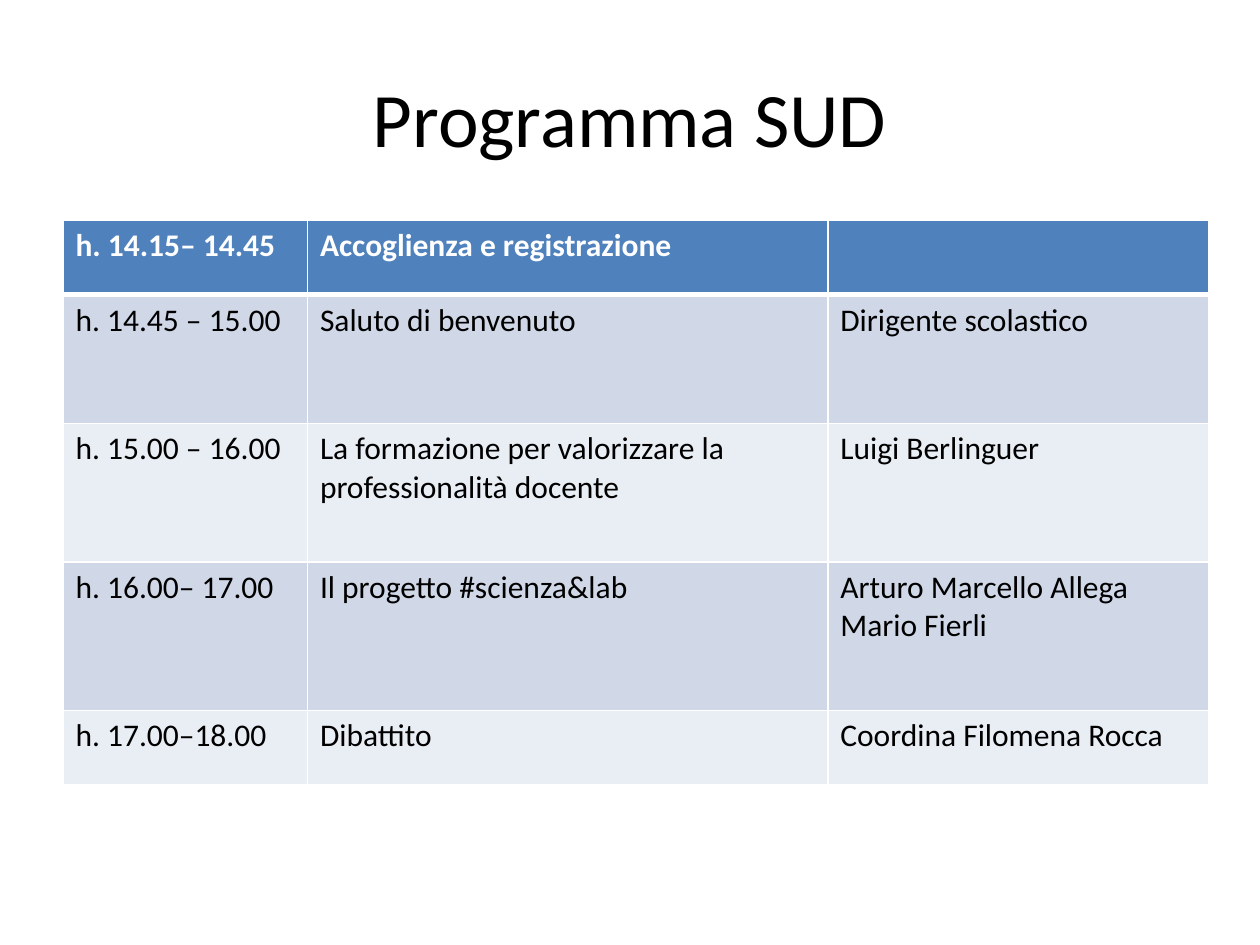
from dataclasses import dataclass

import lxml.etree
import pptx
import pptx.dml.color
import pptx.enum.text
import pptx.oxml.ns
import pptx.util
from pptx.util import Inches

RGBColor = pptx.dml.color.RGBColor
BLACK = RGBColor(0x00, 0x00, 0x00)
WHITE = RGBColor(0xFF, 0xFF, 0xFF)
HEADER_BLUE = RGBColor(0x4F, 0x81, 0xBD)
BAND_DARK = RGBColor(0xD0, 0xD8, 0xE8)
BAND_LIGHT = RGBColor(0xE9, 0xED, 0xF4)
FONT = "Calibri"
COLUMN_WIDTHS = (1.94, 4.13, 3.02)


@dataclass
class Session:
    height: float
    time: str
    topic: str
    speakers: str = ""


SESSIONS = [
    Session(0.59, "h. 14.15– 14.45", "Accoglienza e registrazione"),
    Session(1.02, "h. 14.45 – 15.00", "Saluto di benvenuto", "Dirigente scolastico"),
    Session(1.1, "h. 15.00 – 16.00",
            "La formazione per valorizzare la professionalità docente", "Luigi Berlinguer"),
    Session(1.18, "h. 16.00– 17.00", "Il progetto #scienza&lab",
            "Arturo Marcello Allega\nMario Fierli"),
    Session(0.59, "h. 17.00–18.00", "Dibattito", "Coordina Filomena Rocca"),
]


def write_text(frame, text: str, *, size: float, color: RGBColor,
               bold: bool = False, align=pptx.enum.text.PP_ALIGN.LEFT) -> None:
    """Write one paragraph for each line of text."""
    for index, line in enumerate(text.split("\n")):
        para = frame.add_paragraph() if index else frame.paragraphs[0]
        para.alignment = align
        para.font.size = pptx.util.Pt(size)
        if not line:
            continue
        span = para.add_run()
        span.text = line
        span.font.name = FONT
        span.font.size = pptx.util.Pt(size)
        span.font.bold = bold
        span.font.color.rgb = color


def set_border(cell, side: str, width: float) -> None:
    """Give one side (L, R, T or B) of a cell a white line."""
    qn = pptx.oxml.ns.qn
    properties = cell._tc.get_or_add_tcPr()
    line = lxml.etree.SubElement(properties, qn(f"a:ln{side}"), w=str(pptx.util.Pt(width)))
    fill = lxml.etree.SubElement(line, qn("a:solidFill"))
    lxml.etree.SubElement(fill, qn("a:srgbClr"), val=str(WHITE))


def add_title(page, text: str) -> None:
    box = page.shapes.add_textbox(Inches(0.5), Inches(0.3), Inches(9), Inches(1.25))
    box.text_frame.word_wrap = True
    box.text_frame.vertical_anchor = pptx.enum.text.MSO_ANCHOR.MIDDLE
    write_text(box.text_frame, text, size=44, color=BLACK,
               align=pptx.enum.text.PP_ALIGN.CENTER)


def add_programme(page, sessions: list[Session]) -> None:
    table = page.shapes.add_table(
        len(sessions), len(COLUMN_WIDTHS), Inches(0.5), Inches(1.75),
        Inches(sum(COLUMN_WIDTHS)), Inches(sum(item.height for item in sessions))).table
    for column, width in zip(table.columns, COLUMN_WIDTHS):
        column.width = Inches(width)

    for row, session in enumerate(sessions):
        table.rows[row].height = Inches(session.height)
        header = row == 0
        band = HEADER_BLUE if header else (BAND_LIGHT, BAND_DARK)[row % 2]
        # A thick line parts the header from the rows below
        borders = {"L": 1, "R": 1, "T": 3 if row == 1 else 1, "B": 3 if header else 1}
        for column, text in enumerate((session.time, session.topic, session.speakers)):
            cell = table.cell(row, column)
            for side, width in borders.items():
                set_border(cell, side, width)
            cell.fill.solid()
            cell.fill.fore_color.rgb = band
            write_text(cell.text_frame, text, size=18, bold=header,
                       color=WHITE if header else BLACK)


def main() -> None:
    deck = pptx.Presentation()
    deck.slide_width, deck.slide_height = Inches(10), Inches(7.5)
    page = deck.slides.add_slide(deck.slide_layouts[6])
    add_title(page, "Programma SUD")
    add_programme(page, SESSIONS)
    deck.save("out.pptx")


if __name__ == "__main__":
    main()
